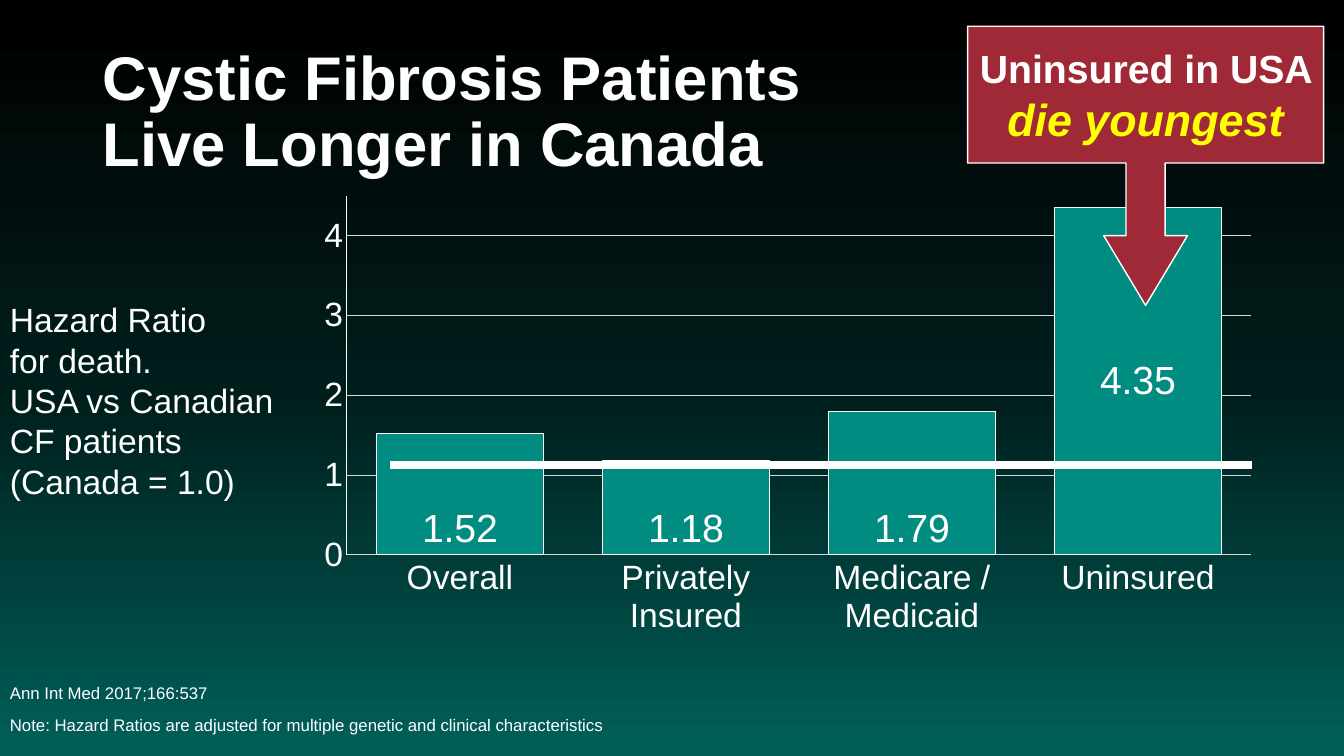
from copy import deepcopy
from dataclasses import dataclass

from lxml import etree
from pptx import Presentation
from pptx import util as u
from pptx.chart import data as chart_data
from pptx.dml.color import RGBColor
from pptx.enum import chart as ch, shapes, text
from pptx.oxml import ns

WHITE = RGBColor(0xFF, 0xFF, 0xFF)
YELLOW = RGBColor(0xFF, 0xFF, 0x00)
GRID_GREY = RGBColor(0xD9, 0xD9, 0xD9)
TEAL = RGBColor(0x00, 0x8C, 0x81)
CRIMSON = RGBColor(0x9F, 0x29, 0x36)
BACKDROP = ((0, RGBColor(0x00, 0x00, 0x00)),
            (0.52, RGBColor(0x00, 0x1E, 0x1C)),
            (1, RGBColor(0x00, 0x60, 0x59)))
FONT = "Arial"
SLIDE_W, SLIDE_H = u.Inches(13.33), u.Inches(7.5)


@dataclass(frozen=True)
class Area:
    """Left, top, width and height in percent of the slide."""
    left: float
    top: float
    width: float
    height: float

    def emu(self) -> tuple[int, int, int, int]:
        return (across(self.left), down(self.top),
                across(self.width), down(self.height))


@dataclass(frozen=True)
class Phrase:
    words: str
    size: float
    bold: bool = False
    italic: bool = False
    color: RGBColor = WHITE


@dataclass(frozen=True)
class Hazard:
    group: str
    ratio: float


HAZARDS = (Hazard("Overall", 1.52),
           Hazard("Privately\nInsured", 1.18),
           Hazard("Medicare /\nMedicaid", 1.79),
           Hazard("Uninsured", 4.35))


def across(percent: float) -> int:
    return round(SLIDE_W * percent / 100)


def down(percent: float) -> int:
    return round(SLIDE_H * percent / 100)


def style_font(font, size: float, bold: bool = False, italic: bool = False,
               color: RGBColor = WHITE) -> None:
    font.name, font.size = FONT, u.Pt(size)
    font.bold, font.italic = bold, italic
    font.color.rgb = color


def style_line(line, color: RGBColor, width: float) -> None:
    line.color.rgb = color
    line.width = u.Pt(width)


def write(frame, paragraphs: list[list[Phrase]], wrap: bool = True,
          align=text.PP_ALIGN.LEFT, spacing: float = 1.0, gap: float = 0) -> None:
    frame.word_wrap = wrap
    frame.vertical_anchor = text.MSO_ANCHOR.MIDDLE
    for index, phrases in enumerate(paragraphs):
        para = frame.add_paragraph() if index else frame.paragraphs[0]
        para.alignment, para.line_spacing = align, spacing
        if index and gap:
            para.space_before = u.Pt(gap)
        for phrase in phrases:
            for row, words in enumerate(phrase.words.split("\n")):
                if row:
                    para.add_line_break()
                run = para.add_run()
                run.text = words
                style_font(run.font, phrase.size, phrase.bold,
                           phrase.italic, phrase.color)


def add_text(slide, area: Area, paragraphs: list[list[Phrase]], **layout) -> None:
    write(slide.shapes.add_textbox(*area.emu()).text_frame, paragraphs, **layout)


def paint_background(slide) -> None:
    fill = slide.background.fill
    fill.gradient()
    fill.gradient_angle = 270
    stops = slide._element.find(".//" + ns.qn("a:gsLst"))
    stops.append(deepcopy(stops[-1]))
    for stop, (position, color) in zip(fill.gradient_stops, BACKDROP):
        stop.position = position
        stop.color.rgb = color


def fix_plot_area(chart, **shares: float) -> None:
    plot_area = chart._chartSpace.find(".//" + ns.qn("c:plotArea"))
    for old in plot_area.findall(ns.qn("c:layout")):
        plot_area.remove(old)
    layout = etree.Element(ns.qn("c:layout"))
    manual = etree.SubElement(layout, ns.qn("c:manualLayout"))
    settings = {"layoutTarget": "inner", "xMode": "edge", "yMode": "edge", **shares}
    for tag, value in settings.items():
        etree.SubElement(manual, ns.qn(f"c:{tag}")).set("val", str(value))
    plot_area.insert(0, layout)


def add_hazard_chart(slide, area: Area) -> None:
    figures = chart_data.CategoryChartData()
    figures.categories = [hazard.group for hazard in HAZARDS]
    figures.add_series("Series 1", [hazard.ratio for hazard in HAZARDS])
    chart = slide.shapes.add_chart(
        ch.XL_CHART_TYPE.COLUMN_CLUSTERED, *area.emu(), figures).chart
    chart.has_legend = chart.has_title = False
    style_font(chart.font, 24)
    fix_plot_area(chart, x=0.044, y=0.02, w=0.936, h=0.787)

    # Axes
    for axis, color in ((chart.category_axis, GRID_GREY), (chart.value_axis, WHITE)):
        axis.major_tick_mark = axis.minor_tick_mark = ch.XL_TICK_MARK.NONE
        style_font(axis.tick_labels.font, 24)
        style_line(axis.format.line, color, 0.75)
    ratios = chart.value_axis
    ratios.minimum_scale, ratios.maximum_scale, ratios.major_unit = 0, 4.5, 1
    ratios.has_major_gridlines = True
    style_line(ratios.major_gridlines.format.line, GRID_GREY, 0.75)

    # Columns and their values
    plot = chart.plots[0]
    plot.gap_width, plot.overlap, plot.vary_by_categories = 35, -27, False
    columns = plot.series[0]
    columns.format.fill.solid()
    columns.format.fill.fore_color.rgb = TEAL
    style_line(columns.format.line, WHITE, 0.75)
    labels = columns.data_labels
    labels.show_value = True
    labels.position = ch.XL_LABEL_POSITION.INSIDE_BASE
    style_font(labels.font, 28)
    uninsured = columns.points[len(HAZARDS) - 1].data_label
    style_font(uninsured.font, 28)
    uninsured.position = ch.XL_LABEL_POSITION.CENTER


def add_canada_line(slide, left: float, right: float, level: float) -> None:
    line = slide.shapes.add_connector(
        shapes.MSO_CONNECTOR.STRAIGHT,
        across(left), down(level), across(right), down(level))
    style_line(line.line, WHITE, 6)
    etree.SubElement(line._element.spPr, ns.qn("a:effectLst"))


def add_callout(slide, area: Area, phrases: list[Phrase]) -> None:
    callout = slide.shapes.add_shape(
        shapes.MSO_SHAPE.DOWN_ARROW_CALLOUT, *area.emu())
    for index, share in enumerate((0.14, 0.15, 0.25, 0.49)):
        callout.adjustments[index] = share
    callout.shadow.inherit = False
    callout.fill.solid()
    callout.fill.fore_color.rgb = CRIMSON
    style_line(callout.line, WHITE, 1)
    write(callout.text_frame, [phrases], align=text.PP_ALIGN.CENTER)


def main() -> None:
    deck = Presentation()
    deck.slide_width, deck.slide_height = SLIDE_W, SLIDE_H
    slide = deck.slides.add_slide(deck.slide_layouts[6])
    paint_background(slide)

    # Title, source notes and axis caption
    add_text(slide, Area(6.9, 5.33, 86.25, 19.33),
             [[Phrase("Cystic Fibrosis Patients\nLive Longer in Canada", 44, bold=True)]],
             spacing=0.9)
    notes = ("Ann Int Med 2017;166:537",
             "Note: Hazard Ratios are adjusted for multiple genetic "
             "and clinical characteristics")
    add_text(slide, Area(0, 87.73, 67.5, 12.27),
             [[Phrase(note, 12)] for note in notes], spacing=0.9, gap=10)
    caption = ("Hazard Ratio", "for death.", "USA vs Canadian",
               "CF patients", "(Canada = 1.0)")
    add_text(slide, Area(0, 38.8, 21.3, 28.27),
             [[Phrase(row, 24)] for row in caption], wrap=False)

    # Chart, reference line and callout
    add_hazard_chart(slide, Area(22.65, 24.67, 71.86, 60.4))
    add_canada_line(slide, left=29.03, right=93.17, level=61.47)
    add_callout(slide, Area(72, 3.47, 26.48, 36.93),
                [Phrase("Uninsured in USA ", 28, bold=True),
                 Phrase("die youngest", 32, bold=True, italic=True, color=YELLOW)])
    deck.save("out.pptx")


if __name__ == "__main__":
    main()
